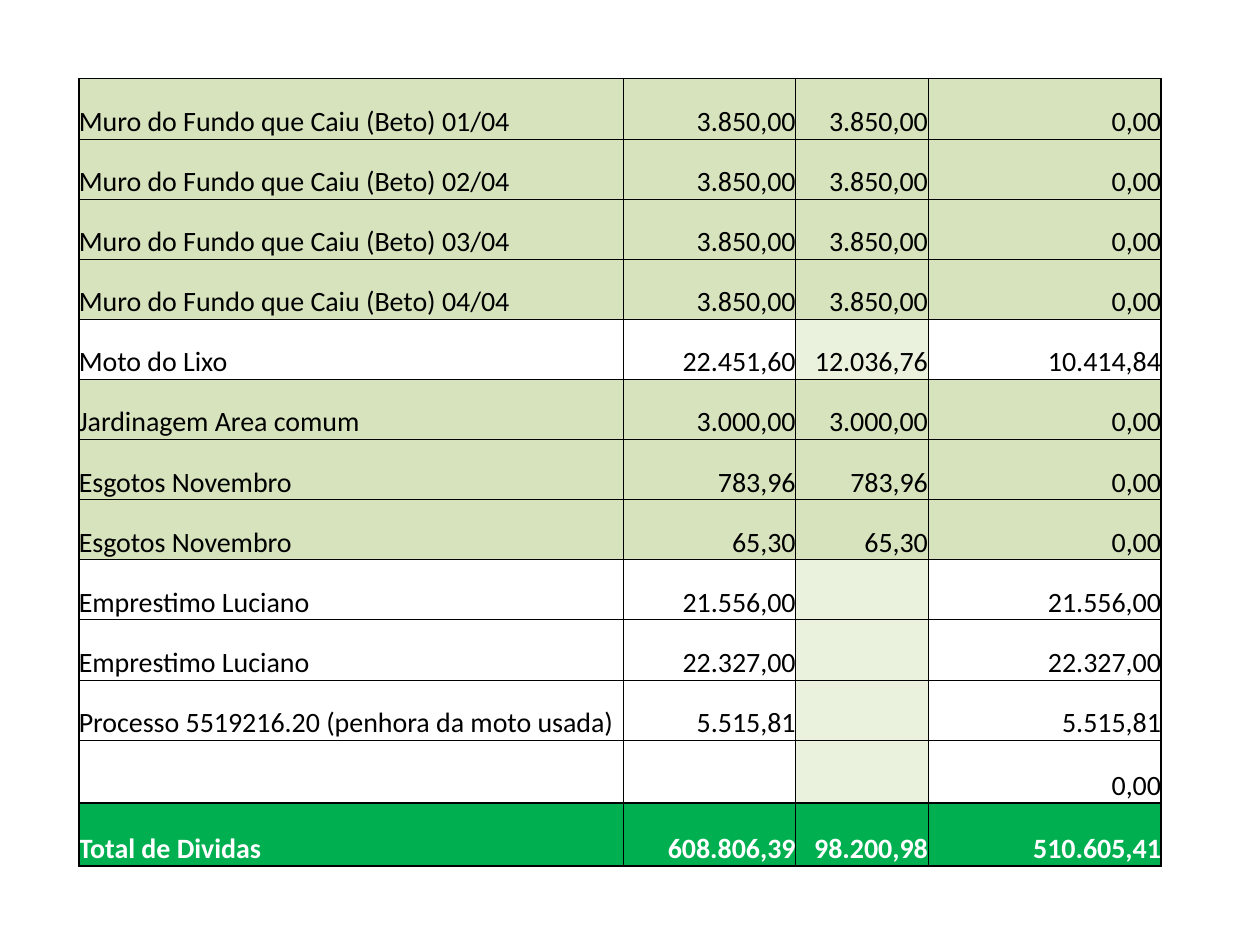
import pptx
import pptx.util
import pptx.dml.color
import pptx.enum.text
import pptx.oxml.ns
from lxml import etree

WIDE, HIGH = 10, 7.5
COLS = [4.32, 1.37, 1.05, 1.85]
TALL = [21] * 11 + [22] * 2
PAID, PART, TOTAL = "D6E3BC", "EAF1DD", "00B050"
BLACK, WHITE = "000000", "FFFFFF"

DEBTS = [
    *[(f"Muro do Fundo que Caiu (Beto) {n:02}/04", "3.850,00", "3.850,00", "0,00")
      for n in range(1, 5)],
    ("Moto do Lixo", "22.451,60", "12.036,76", "10.414,84"),
    ("Jardinagem Area comum", "3.000,00", "3.000,00", "0,00"),
    ("Esgotos Novembro", "783,96", "783,96", "0,00"),
    ("Esgotos Novembro", "65,30", "65,30", "0,00"),
    ("Emprestimo Luciano", "21.556,00", "", "21.556,00"),
    ("Emprestimo Luciano", "22.327,00", "", "22.327,00"),
    ("Processo 5519216.20 (penhora da moto usada)", "5.515,81", "", "5.515,81"),
    ("", "", "", "0,00"),
    ("Total de Dividas", "608.806,39", "98.200,98", "510.605,41"),
]


def color(code):
    return pptx.dml.color.RGBColor.from_string(code)


def edge(cell, side, size):
    name = pptx.oxml.ns.qn
    props = cell._tc.get_or_add_tcPr()
    line = etree.SubElement(props, name(f"a:ln{side}"), w=str(pptx.util.Pt(size)))
    fill = etree.SubElement(line, name("a:solidFill"))
    etree.SubElement(fill, name("a:srgbClr"), val=BLACK)


def frame(cell, row, col):
    last = len(DEBTS) - 1
    thick = {
        "L": col == 0,
        "R": col == len(COLS) - 1,
        "T": row == last,
        "B": row >= last - 1,
    }
    for side, bold in thick.items():
        edge(cell, side, 1 if bold else 0.5)


def shade(row, col):
    if row == len(DEBTS) - 1:
        return TOTAL
    if DEBTS[row][2] and DEBTS[row][3] == "0,00":
        return PAID
    return PART if col == 2 else None


def write(cell, text, col, total):
    align = pptx.enum.text.PP_ALIGN
    cell.vertical_anchor = pptx.enum.text.MSO_ANCHOR.BOTTOM
    cell.margin_left = cell.margin_right = 0
    cell.margin_top = cell.margin_bottom = 0
    para = cell.text_frame.paragraphs[0]
    para.alignment = align.RIGHT if col else align.LEFT
    if text:
        run = para.add_run()
        run.text = text
        run.font.name = "Calibri"
        run.font.size = pptx.util.Pt(16)
        run.font.bold = total
        run.font.color.rgb = color(WHITE if total else BLACK)


def ledger(slide, left, top, width, height):
    box = [pptx.util.Inches(n) for n in (left, top, width, height)]
    table = slide.shapes.add_table(len(DEBTS), len(COLS), *box).table
    table.first_row = table.horz_banding = False
    for col, share in zip(table.columns, COLS):
        col.width = pptx.util.Inches(width * share / sum(COLS))
    for row, share in zip(table.rows, TALL):
        row.height = pptx.util.Inches(height * share / sum(TALL))
    for row, debt in enumerate(DEBTS):
        for col, text in enumerate(debt):
            cell = table.cell(row, col)
            frame(cell, row, col)
            tint = shade(row, col)
            if tint:
                cell.fill.solid()
                cell.fill.fore_color.rgb = color(tint)
            else:
                cell.fill.background()
            write(cell, text, col, row == len(DEBTS) - 1)


def main():
    deck = pptx.Presentation()
    deck.slide_width = pptx.util.Inches(WIDE)
    deck.slide_height = pptx.util.Inches(HIGH)
    slide = deck.slides.add_slide(deck.slide_layouts[6])
    ledger(slide, WIDE / 16, HIGH / 12, sum(COLS), HIGH * 10 / 12)
    deck.save("out.pptx")


if __name__ == "__main__":
    main()
